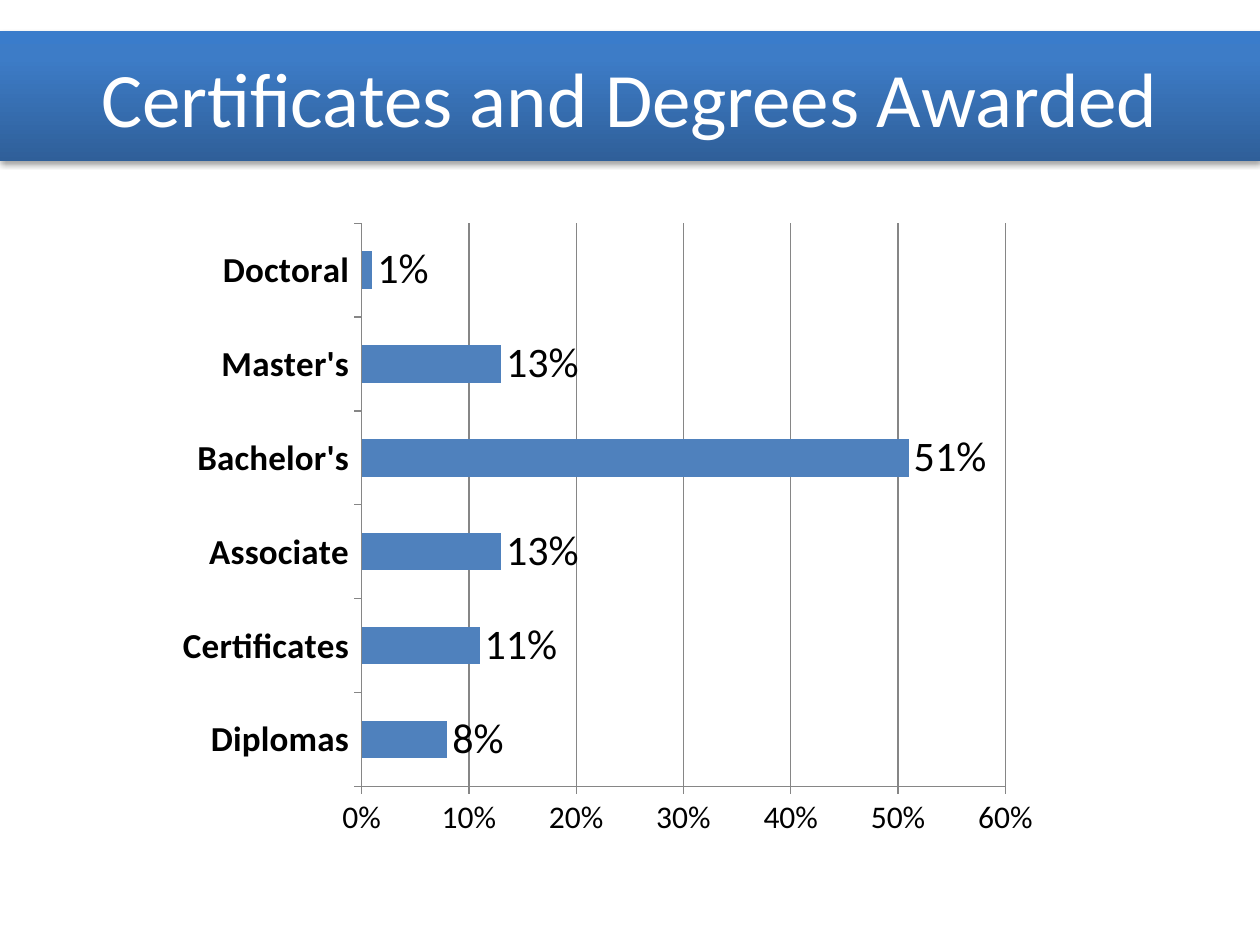
"""Build a slide with a title banner and a bar chart of awards by type."""
from copy import deepcopy

from lxml import etree
from pptx import Presentation
from pptx.chart.data import CategoryChartData
from pptx.dml.color import RGBColor
from pptx.enum.chart import XL_CHART_TYPE, XL_LABEL_POSITION, XL_TICK_MARK
from pptx.enum.shapes import MSO_SHAPE
from pptx.enum.text import MSO_ANCHOR, PP_ALIGN
from pptx.oxml import parse_xml
from pptx.oxml.ns import nsdecls, qn
from pptx.util import Inches, Pt

TITLE = "Certificates and Degrees Awarded"
AWARDS = {
    "Diplomas": 0.08,
    "Certificates": 0.11,
    "Associate": 0.13,
    "Bachelor's": 0.51,
    "Master's": 0.13,
    "Doctoral": 0.01,
}
FONT = "Calibri"
PERCENT = "0%"
COLORS = {"text": "000000", "title": "FFFFFF", "bar": "4F81BD", "line": "868686"}
BANNER_STOPS = [(0, "2F5F99"), (0.8, "3D7CC7"), (1, "3A7CCB")]
PLOT_LAYOUT = {"x": 0.22, "y": 0.02, "w": 0.73, "h": 0.88}


def style_font(font, size, color, bold=False):
    font.name = FONT
    font.size = Pt(size)
    font.bold = bold
    font.color.rgb = RGBColor.from_string(color)


def add_banner(slide):
    banner = slide.shapes.add_shape(
        MSO_SHAPE.RECTANGLE, 0, Inches(0.25), Inches(10), Inches(1.03))
    banner.line.fill.background()
    banner.fill.gradient()
    banner.fill.gradient_angle = 90
    stop_list = banner.element.spPr.find(".//" + qn("a:gsLst"))
    stop_list.append(deepcopy(stop_list[-1]))
    for stop, (position, color) in zip(banner.fill.gradient_stops, BANNER_STOPS):
        stop.position = position
        stop.color.rgb = RGBColor.from_string(color)
    banner.shadow.inherit = False
    banner.element.spPr.find(qn("a:effectLst")).append(parse_xml(
        f'<a:outerShdw {nsdecls("a")} blurRad="{Pt(3.1)}" dist="{Pt(1.8)}" '
        'dir="5400000" rotWithShape="0"><a:srgbClr val="000000">'
        '<a:alpha val="35000"/></a:srgbClr></a:outerShdw>'))
    frame = banner.text_frame
    frame.word_wrap = True
    frame.vertical_anchor = MSO_ANCHOR.MIDDLE
    paragraph = frame.paragraphs[0]
    paragraph.text = TITLE
    paragraph.alignment = PP_ALIGN.CENTER
    style_font(paragraph.font, 44, COLORS["title"])


def set_plot_layout(chart):
    plot_area = chart.element.find(".//" + qn("c:plotArea"))
    for old_layout in plot_area.findall(qn("c:layout")):
        plot_area.remove(old_layout)
    layout = etree.Element(qn("c:layout"))
    manual = etree.SubElement(layout, qn("c:manualLayout"))
    settings = {"layoutTarget": "inner", "xMode": "edge", "yMode": "edge", **PLOT_LAYOUT}
    for name, value in settings.items():
        etree.SubElement(manual, qn(f"c:{name}")).set("val", str(value))
    plot_area.insert(0, layout)


def add_awards_chart(slide):
    data = CategoryChartData(number_format=PERCENT)
    data.categories = list(AWARDS)
    data.add_series("Series 1", list(AWARDS.values()))
    chart = slide.shapes.add_chart(
        XL_CHART_TYPE.BAR_CLUSTERED,
        Inches(1.33), Inches(1.67), Inches(7), Inches(5.08), data).chart
    chart.has_legend = False
    chart.has_title = False
    style_font(chart.font, 10, COLORS["text"])
    line_color = RGBColor.from_string(COLORS["line"])

    for axis, size, bold in [(chart.category_axis, 20, True), (chart.value_axis, 18, False)]:
        axis.major_tick_mark = XL_TICK_MARK.OUTSIDE
        axis.minor_tick_mark = XL_TICK_MARK.NONE
        axis.format.line.color.rgb = line_color
        style_font(axis.tick_labels.font, size, COLORS["text"], bold)
    chart.category_axis.has_major_gridlines = False
    value_axis = chart.value_axis
    value_axis.minimum_scale, value_axis.maximum_scale, value_axis.major_unit = 0, 0.6, 0.1
    value_axis.tick_labels.number_format = PERCENT
    value_axis.tick_labels.number_format_is_linked = False
    value_axis.has_major_gridlines = True
    value_axis.major_gridlines.format.line.color.rgb = line_color

    plot = chart.plots[0]
    plot.gap_width = 150
    plot.vary_by_categories = False
    series = plot.series[0]
    series.format.fill.solid()
    series.format.fill.fore_color.rgb = RGBColor.from_string(COLORS["bar"])
    labels = series.data_labels
    labels.show_value = True
    labels.number_format = PERCENT
    labels.number_format_is_linked = False
    labels.position = XL_LABEL_POSITION.OUTSIDE_END
    style_font(labels.font, 24, COLORS["text"])
    set_plot_layout(chart)


def main():
    presentation = Presentation()
    presentation.slide_width = Inches(10)
    presentation.slide_height = Inches(7.5)
    slide = presentation.slides.add_slide(presentation.slide_layouts[6])
    add_banner(slide)
    add_awards_chart(slide)
    presentation.save("out.pptx")


if __name__ == "__main__":
    main()
